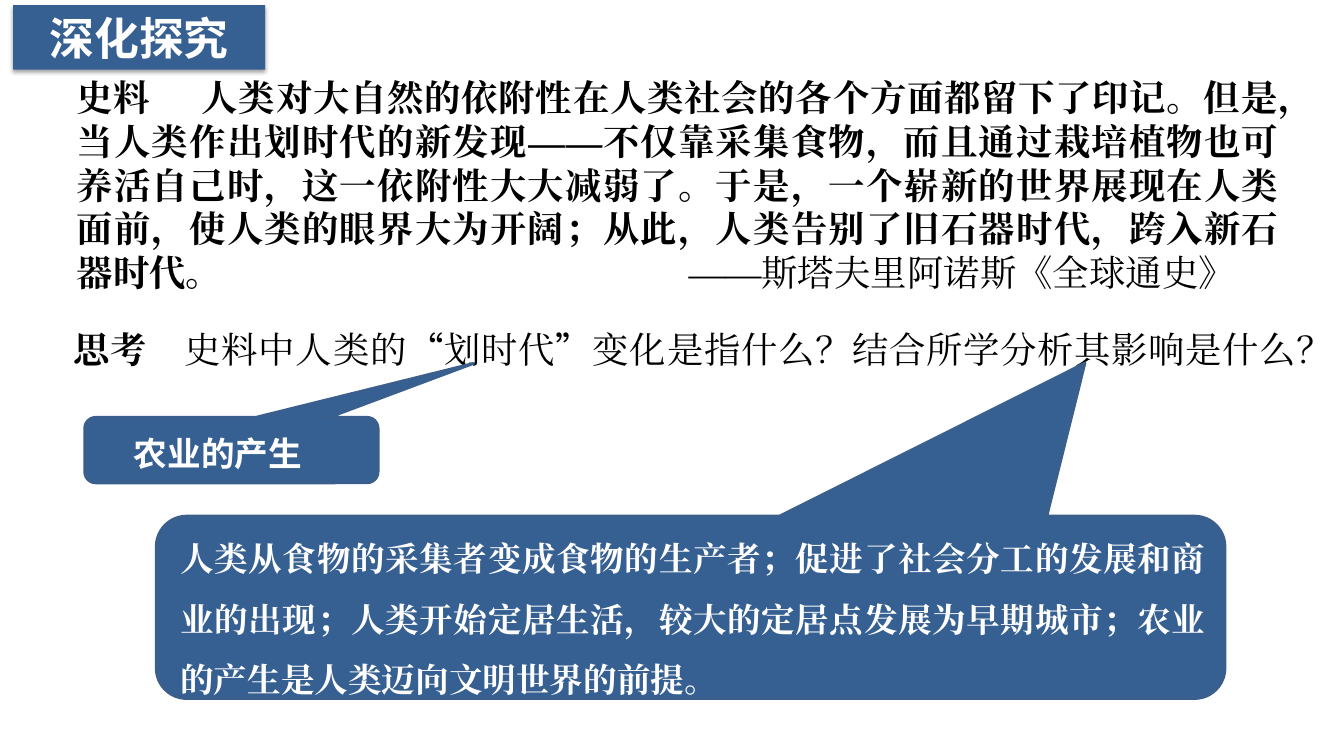
from dataclasses import dataclass

from lxml.etree import SubElement
from pptx import Presentation
from pptx.dml.color import RGBColor
from pptx.enum.shapes import MSO_SHAPE
from pptx.enum.text import MSO_ANCHOR, MSO_AUTO_SIZE, PP_ALIGN
from pptx.oxml.ns import qn
from pptx.util import Inches, Pt


@dataclass(frozen=True)
class Theme:
    blue: RGBColor = RGBColor(0x37, 0x60, 0x92)
    edge: RGBColor = RGBColor(0x3A, 0x5F, 0x8C)
    black: RGBColor = RGBColor(0, 0, 0)
    white: RGBColor = RGBColor(255, 255, 255)
    serif: str = "Times New Roman"
    sans: str = "Noto Sans CJK SC"
    title: int = 32
    body: int = 26
    answer: int = 24


theme = Theme()


def write(shape, runs, size, color, align=PP_ALIGN.JUSTIFY, spacing=None,
          anchor=MSO_ANCHOR.TOP, inset=(0.1, 0.05), tabs=()):
    """Fill a shape with one paragraph of (text, font, bold) runs."""
    frame = shape.text_frame
    frame.word_wrap = True
    frame.auto_size = MSO_AUTO_SIZE.NONE
    frame.vertical_anchor = anchor
    frame.margin_left = frame.margin_right = Inches(inset[0])
    frame.margin_top = frame.margin_bottom = Inches(inset[1])
    paragraph = frame.paragraphs[0]
    paragraph.alignment = align
    if spacing:
        paragraph.line_spacing = spacing
    if tabs:
        stops = SubElement(paragraph._p.get_or_add_pPr(), qn("a:tabLst"))
        for stop in tabs:
            SubElement(stops, qn("a:tab"), pos=str(Inches(stop)), algn="l")
    for text, typeface, bold in runs:
        run = paragraph.add_run()
        run.text = text
        run.font.size = Pt(size)
        run.font.bold = bold
        run.font.color.rgb = color
        run.font.name = typeface
        SubElement(run.font._element, qn("a:ea"), typeface=typeface)


def add_callout(left, top, width, height, tip_x, tip_y):
    callout = slide.shapes.add_shape(
        MSO_SHAPE.ROUNDED_RECTANGULAR_CALLOUT,
        Inches(left), Inches(top), Inches(width), Inches(height))
    callout.shadow.inherit = False
    callout.adjustments[0] = tip_x
    callout.adjustments[1] = tip_y
    callout.fill.solid()
    callout.fill.fore_color.rgb = theme.blue
    callout.line.color.rgb = theme.edge
    callout.line.width = Pt(2)


deck = Presentation()
deck.slide_width, deck.slide_height = Inches(13.33), Inches(7.5)
slide = deck.slides.add_slide(deck.slide_layouts[5])

# Heading
heading = slide.shapes.title
heading.left, heading.top = Inches(0.13), Inches(0.05)
heading.width, heading.height = Inches(2.5), Inches(0.64)
heading.fill.solid()
heading.fill.fore_color.rgb = theme.blue
write(heading, [("深化探究", theme.sans, True)], theme.title, theme.white,
      align=PP_ALIGN.CENTER, anchor=MSO_ANCHOR.MIDDLE)
effects = SubElement(heading._element.spPr, qn("a:effectLst"))
shadow = SubElement(effects, qn("a:outerShdw"), blurRad=str(Pt(3.1)),
                    dist=str(Pt(1.8)), dir="5400000", rotWithShape="0")
shadow_color = SubElement(shadow, qn("a:srgbClr"), val=str(theme.black))
SubElement(shadow_color, qn("a:alpha"), val="35000")

# Source passage and question
passage = slide.shapes.add_textbox(Inches(0.63), Inches(0.68), Inches(12.19), Inches(2.32))
write(passage, [
    ("史料\t人类对大自然的依附性在人类社会的各个方面都留下了印记。但是，"
     "当人类作出划时代的新发现——不仅靠采集食物，而且通过栽培植物也可养活自己时，"
     "这一依附性大大减弱了。于是，一个崭新的世界展现在人类面前，使人类的眼界大为开阔；"
     "从此，人类告别了旧石器时代，跨入新石器时代。\t", theme.serif, True),
    ("——斯塔夫里阿诺斯《全球通史》", theme.serif, False),
], theme.body, theme.black, inset=(0.13, 0.07), tabs=(1.22, 6.07))

question = slide.shapes.add_textbox(Inches(0.6), Inches(2.96), Inches(12.4), Inches(0.79))
write(question, [
    ("思考", theme.serif, True),
    ("　史料中人类的", theme.serif, False),
    ("“", theme.sans, False),
    ("划时代", theme.serif, False),
    ("”", theme.sans, False),
    ("变化是指什么？结合所学分析其影响是什么？", theme.serif, False),
], theme.body, theme.black, spacing=1.5, inset=(0.13, 0.07))

# Answers
add_callout(0.84, 4.14, 2.91, 0.65, 0.825, -1.323)
change = slide.shapes.add_textbox(Inches(1.23), Inches(4.2), Inches(2.41), Inches(0.54))
write(change, [("农业的产生", theme.sans, True)], theme.answer, theme.white,
      align=PP_ALIGN.LEFT, spacing=1.1, anchor=MSO_ANCHOR.MIDDLE)

add_callout(1.55, 5.12, 10.6, 1.81, 0.369, -1.339)
impact = slide.shapes.add_textbox(Inches(1.69), Inches(5.09), Inches(10.37), Inches(1.92))
write(impact, [
    ("人类从食物的采集者变成食物的生产者；促进了社会分工的发展和商业的出现；"
     "人类开始定居生活，较大的定居点发展为早期城市；"
     "农业的产生是人类迈向文明世界的前提。", theme.serif, True),
], theme.answer, theme.white, spacing=1.5)

deck.save("out.pptx")
